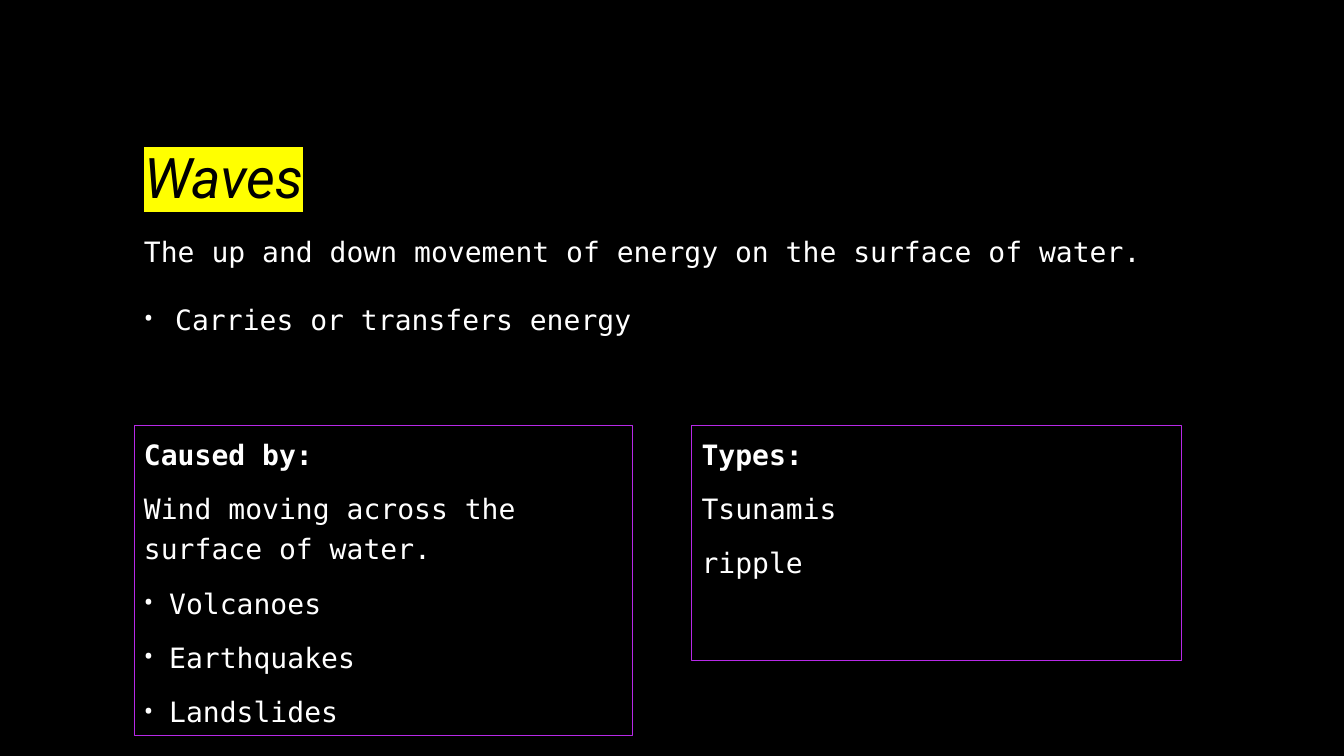
import pptx
import pptx.dml.color
import pptx.enum.shapes
import pptx.enum.text
import pptx.oxml
import pptx.oxml.ns
import pptx.util
from pptx.util import Inches

COLORS = {"background": "000000", "text": "FFFFFF", "border": "B629E7", "highlight": "FFFF00"}
BODY_FONT = "DejaVu Sans Mono"
TITLE_FONT = "Roboto"
NS = pptx.oxml.ns.nsdecls("a")


def rgb(name):
    return pptx.dml.color.RGBColor.from_string(COLORS[name])


def write_lines(tf, lines, bullets_from, indent, gap, spacing):
    """Fill a text frame; lines from index bullets_from on get a bullet."""
    tf.word_wrap = True
    tf.vertical_anchor = pptx.enum.text.MSO_ANCHOR.TOP
    tf.text = "\n".join(lines)
    for i, p in enumerate(tf.paragraphs):
        p.alignment = pptx.enum.text.PP_ALIGN.LEFT
        if i >= bullets_from:
            pPr = p._p.get_or_add_pPr()
            pPr.set("marL", str(Inches(indent)))
            pPr.set("indent", str(Inches(-indent)))
            for bullet in (f'<a:buFont {NS} typeface="{TITLE_FONT}"/>', f'<a:buChar {NS} char="•"/>'):
                pPr.append(pptx.oxml.parse_xml(bullet))
        p.line_spacing = spacing
        if i > 0:
            p.space_before = pptx.util.Pt(gap)
        for r in p.runs:
            r.font.name = BODY_FONT
            r.font.size = pptx.util.Pt(20)
            r.font.color.rgb = rgb("text")


prs = pptx.Presentation()
prs.slide_width, prs.slide_height = Inches(13.33), Inches(7.5)
s = prs.slides.add_slide(prs.slide_layouts[6])
s.background.fill.solid()
s.background.fill.fore_color.rgb = rgb("background")

# Title
title = s.shapes.add_textbox(Inches(1.33), Inches(0.4), Inches(10.38), Inches(1.73))
tf = title.text_frame
tf.word_wrap = True
tf.vertical_anchor = pptx.enum.text.MSO_ANCHOR.BOTTOM
tf.text = "Waves"
p = tf.paragraphs[0]
p.line_spacing = 1.2
r = p.runs[0]
r.font.size = pptx.util.Pt(40)
r.font.italic = True
r.font.name = TITLE_FONT
r.font.color.rgb = rgb("background")
fill = r._r.get_or_add_rPr().find(pptx.oxml.ns.qn("a:solidFill"))
fill.addnext(pptx.oxml.parse_xml(
    f'<a:highlight {NS}><a:srgbClr val="{COLORS["highlight"]}"/></a:highlight>'))

# Definition
definition = s.shapes.add_textbox(Inches(1.33), Inches(2.28), Inches(10.1), Inches(1.11))
write_lines(definition.text_frame,
            ["The up and down movement of energy on the surface of water.",
             "Carries or transfers energy"],
            bullets_from=1, indent=0.31, gap=24, spacing=1.0)

# Causes and types
panels = [
    (1.33, 4.94, 3.08, ["Caused by:", "Wind moving across the surface of water.",
                        "Volcanoes", "Earthquakes", "Landslides"]),
    (6.86, 4.86, 2.33, ["Types:", "Tsunamis", "ripple"]),
]
for left, width, height, lines in panels:
    sp = s.shapes.add_shape(pptx.enum.shapes.MSO_SHAPE.RECTANGLE,
                            Inches(left), Inches(4.22), Inches(width), Inches(height))
    sp.shadow.inherit = False
    sp.fill.background()
    sp.line.color.rgb = rgb("border")
    sp.line.width = pptx.util.Pt(0.75)
    bullets_from = 2 if lines[0] == "Caused by:" else len(lines)
    write_lines(sp.text_frame, lines, bullets_from, indent=0.25, gap=10, spacing=1.2)
    sp.text_frame.paragraphs[0].runs[0].font.bold = True

prs.save("out.pptx")
